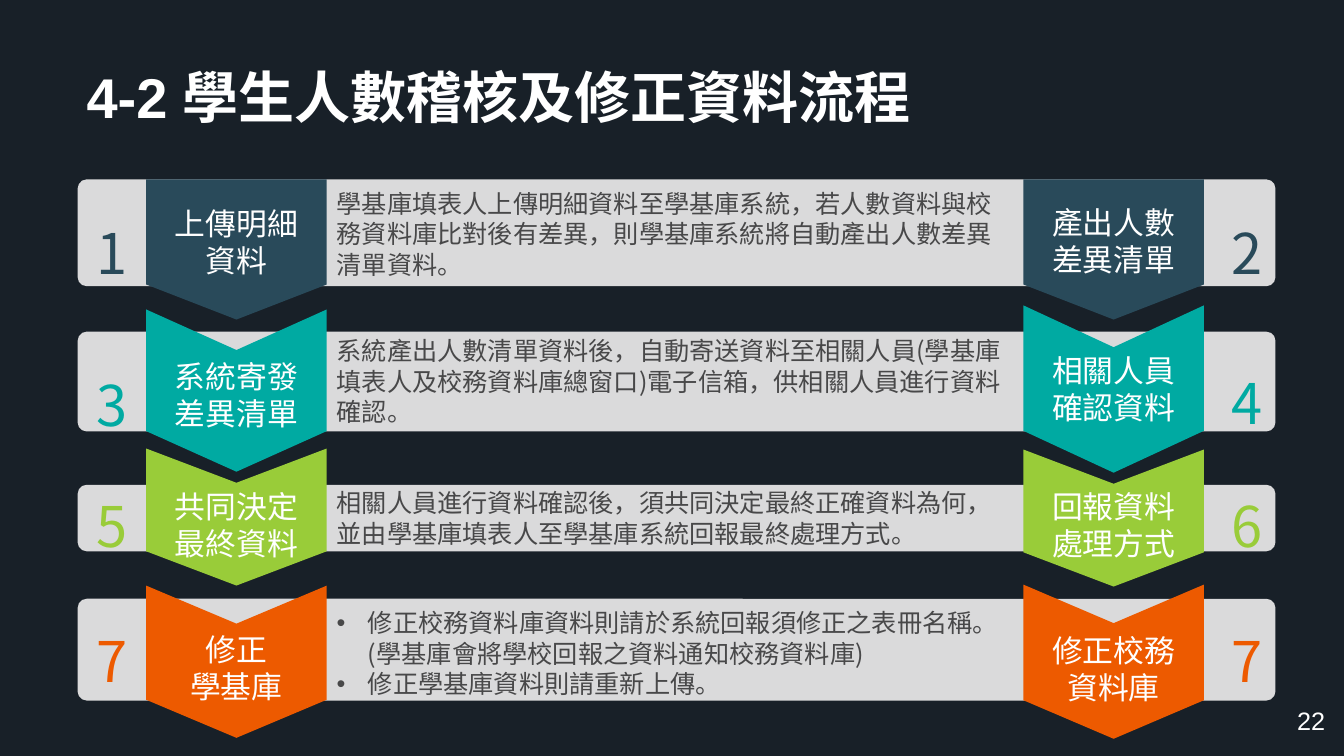
from dataclasses import dataclass

from lxml.etree import SubElement
from pptx import Presentation
from pptx.dml.color import RGBColor
from pptx.enum.shapes import MSO_SHAPE as Preset
from pptx.enum.text import PP_ALIGN as Align
from pptx.oxml.ns import qn
from pptx.util import Inches, Pt

# Content: each row holds its bar, its text and its two steps
TITLE = "4-2 學生人數稽核及修正資料流程"
PAGE = "22"
ROWS = [
    dict(color="294A5A", bar=(1.78, 1.06), text_top=1.82, bullets=False, notched=False,
         text=["學基庫填表人上傳明細資料至學基庫系統，若人數資料與校務資料庫比對後有差異，"
               "則學基庫系統將自動產出人數差異清單資料。"],
         left=dict(number="1", label=["上傳明細資料"], arrow=(1.78, 1.39), label_top=1.98, number_top=2.12),
         right=dict(number="2", label=["產出人數差異清單"], arrow=(1.78, 1.39), label_top=1.97, number_top=2.12)),
    dict(color="00AAA2", bar=(3.29, 0.99), text_top=3.28, bullets=False, notched=True,
         text=["系統產出人數清單資料後，自動寄送資料至相關人員(學基庫填表人及校務資料庫總窗口)"
               "電子信箱，供相關人員進行資料確認。"],
         left=dict(number="3", label=["系統寄發差異清單"], arrow=(3.07, 1.61), label_top=3.5, number_top=3.63),
         right=dict(number="4", label=["相關人員確認資料"], arrow=(3.03, 1.66), label_top=3.44, number_top=3.61)),
    dict(color="99CC39", bar=(4.81, 0.66), text_top=4.79, bullets=False, notched=True,
         text=["相關人員進行資料確認後，須共同決定最終正確資料為何，"
               "並由學基庫填表人至學基庫系統回報最終處理方式。"],
         left=dict(number="5", label=["共同決定最終資料"], arrow=(4.45, 1.36), label_top=4.79, number_top=4.83),
         right=dict(number="6", label=["回報資料處理方式"], arrow=(4.46, 1.36), label_top=4.79, number_top=4.83)),
    dict(color="ED5A00", bar=(5.94, 1.01), text_top=5.98, bullets=True, notched=True,
         text=["修正校務資料庫資料則請於系統回報須修正之表冊名稱。(學基庫會將學校回報之資料通知校務資料庫)",
               "修正學基庫資料則請重新上傳。"],
         left=dict(number="7", label=["修正", "學基庫"], arrow=(5.81, 1.51), label_top=6.21, number_top=6.17),
         right=dict(number="7", label=["修正校務資料庫"], arrow=(5.8, 1.53), label_top=6.22, number_top=6.17)),
]


@dataclass(frozen=True)
class Theme:
    background: str = "182028"
    bar: str = "DADADB"
    body: str = "484849"
    white: str = "FFFFFF"
    latin: str = "Arial"
    cjk: str = "Noto Sans CJK SC"
    title_size: int = 40
    number_size: int = 40
    label_size: int = 22
    body_size: int = 18


THEME = Theme()

# Grid, in inches
WIDTH, HEIGHT = 13.33, 7.5
BAR_LEFT, BAR_WIDTH, CORNER = 0.77, 11.88, 0.09
ARROW_WIDTH, POINT_SHARE = 1.79, 0.25
LABEL_WIDTH, LABEL_HEIGHT = 1.5, 0.84
NUMBER_WIDTH, NUMBER_HEIGHT = 0.58, 0.77
TEXT_LEFT, TEXT_WIDTH = 3.24, 6.89
HANGING = 0.31
COLUMNS = {"left": (1.45, 0.82), "right": (10.15, 12.08)}  # arrow, number

presentation = Presentation()
presentation.slide_width, presentation.slide_height = Inches(WIDTH), Inches(HEIGHT)
slide = presentation.slides.add_slide(presentation.slide_layouts[6])


def paint(shape, color):
    shape.shadow.inherit = False
    shape.fill.solid()
    shape.fill.fore_color.rgb = RGBColor.from_string(color)
    shape.line.fill.background()


def add_block(preset, left, top, width, height, color):
    shape = slide.shapes.add_shape(preset, *map(Inches, (left, top, width, height)))
    paint(shape, color)
    return shape


def add_arrow(left, top, height, notched, color):
    """Downward arrow whose point, and notch if any, is a share of its height."""
    depth = height * POINT_SHARE
    middle, right, shoulder = left + ARROW_WIDTH / 2, left + ARROW_WIDTH, top + height - depth
    points = [(right, shoulder), (middle, top + height), (left, shoulder), (left, top)]
    if notched:
        points.append((middle, top + depth))
    builder = slide.shapes.build_freeform(Inches(right), Inches(top))
    builder.add_line_segments([(Inches(x), Inches(y)) for x, y in points], close=True)
    paint(builder.convert_to_shape(), color)


def add_text(box, lines, size, color, align=Align.LEFT, font=THEME.cjk,
             bold=False, bullets=False, spacing=None):
    frame = slide.shapes.add_textbox(*map(Inches, box)).text_frame
    frame.word_wrap = True
    for index, line in enumerate(lines):
        paragraph = frame.add_paragraph() if index else frame.paragraphs[0]
        paragraph.alignment = align
        if spacing:
            paragraph.line_spacing = Pt(spacing)
        if bullets:
            properties = paragraph._p.get_or_add_pPr()
            properties.set("marL", str(Inches(HANGING)))
            properties.set("indent", str(-Inches(HANGING)))
            SubElement(properties, qn("a:buFont")).set("typeface", THEME.latin)
            SubElement(properties, qn("a:buChar")).set("char", "•")
        run = paragraph.add_run()
        run.text = line
        run.font.name, run.font.size, run.font.bold = font, Pt(size), bold
        run.font.color.rgb = RGBColor.from_string(color)
        SubElement(run._r.get_or_add_rPr(), qn("a:ea")).set("typeface", THEME.cjk)


# Background and title
add_block(Preset.RECTANGLE, 0, 0, WIDTH, HEIGHT, THEME.background)
add_text((0.76, 0.68, 9.68, 0.66), [TITLE], THEME.title_size, THEME.white,
         font=THEME.latin, bold=True, spacing=THEME.title_size)

# Bars lie behind every arrow
for row in ROWS:
    top, height = row["bar"]
    bar = add_block(Preset.ROUNDED_RECTANGLE, BAR_LEFT, top, BAR_WIDTH, height, THEME.bar)
    bar.adjustments[0] = CORNER / height

# Arrows, labels, numbers and descriptions
for row in ROWS:
    for side, (arrow_left, number_left) in COLUMNS.items():
        step = row[side]
        add_arrow(arrow_left, *step["arrow"], row["notched"], row["color"])
        label_left = arrow_left + (ARROW_WIDTH - LABEL_WIDTH) / 2
        add_text((label_left, step["label_top"], LABEL_WIDTH, LABEL_HEIGHT),
                 step["label"], THEME.label_size, THEME.white, Align.CENTER)
        add_text((number_left, step["number_top"], NUMBER_WIDTH, NUMBER_HEIGHT),
                 [step["number"]], THEME.number_size, row["color"], Align.CENTER)
    add_text((TEXT_LEFT, row["text_top"], TEXT_WIDTH, row["bar"][1]),
             row["text"], THEME.body_size, THEME.body, bullets=row["bullets"])

# Page number
add_text((10.24, 6.95, 3, 0.4), [PAGE], THEME.body_size, THEME.white, Align.RIGHT, THEME.latin)

presentation.save("out.pptx")
